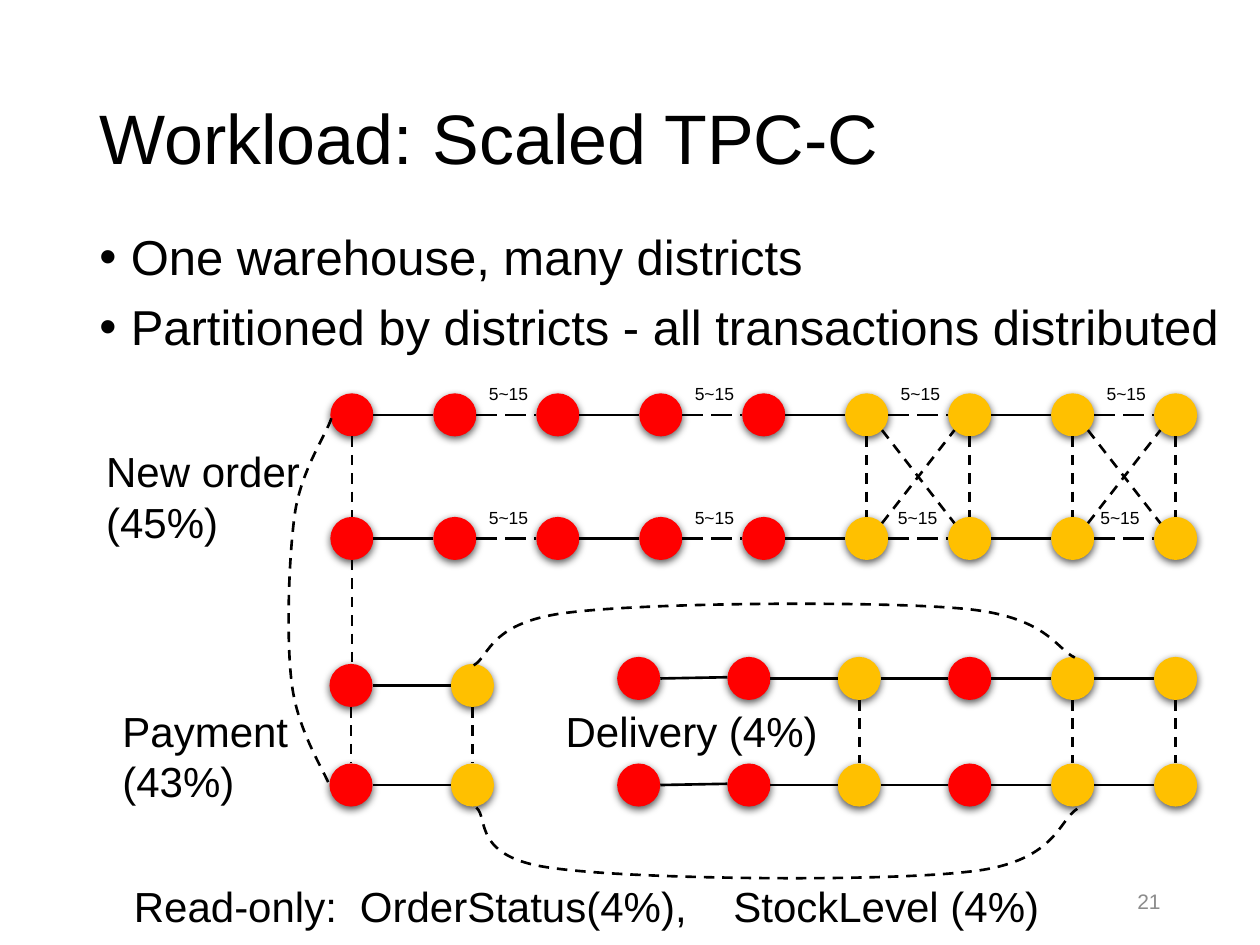
import lxml.etree
import pptx
import pptx.dml.color
import pptx.enum.dml
import pptx.enum.shapes
import pptx.enum.text
import pptx.oxml.ns
import pptx.util

Pt = pptx.util.Pt
RGB = pptx.dml.color.RGBColor.from_string
qn = pptx.oxml.ns.qn
sub = lxml.etree.SubElement
Dash = pptx.enum.dml.MSO_LINE
Align = pptx.enum.text.PP_ALIGN
Anchor = pptx.enum.text.MSO_ANCHOR
Kind = pptx.enum.shapes.MSO_SHAPE
Link = pptx.enum.shapes.MSO_CONNECTOR

theme = {
    "font": "Arial", "ink": RGB("000000"), "mute": RGB("8C8C8C"),
    "R": RGB("FF0000"), "Y": RGB("FFC000"), "line": Pt(1.5),
    "title": Pt(40), "body": Pt(28), "label": Pt(24), "page": Pt(12), "count": Pt(10),
}

deck = pptx.Presentation()
deck.slide_width, deck.slide_height = Pt(720), Pt(540)
slide = deck.slides.add_slide(deck.slide_layouts[5])
shapes = slide.shapes


def write(shape, lines, size, ink="ink", frame={}, para={}):
    box = shape.text_frame
    box.text = "\n".join(lines)
    for key, val in {"word_wrap": True, **frame}.items():
        setattr(box, key, val)
    for part in box.paragraphs:
        for key, val in {"alignment": Align.LEFT, **para}.items():
            setattr(part, key, val)
        for run in part.runs:
            for key, val in {"name": theme["font"], "size": theme[size]}.items():
                setattr(run.font, key, val)
            run.font.color.rgb = theme[ink]
    return box.paragraphs


def wire(x1, y1, x2, y2, dash=None):
    line = shapes.add_connector(Link.STRAIGHT, Pt(x1), Pt(y1), Pt(x2), Pt(y2))
    line.line.color.rgb = theme["ink"]
    for key, val in {"width": theme["line"], "dash_style": dash}.items():
        setattr(line.line, key, val)
    sub(line._element.spPr, qn("a:effectLst"))


title = shapes.title
for key, val in {"left": 49.68, "top": 28.8, "width": 620.64, "height": 104.4}.items():
    setattr(title, key, Pt(val))
write(title, ["Workload: Scaled TPC-C"], "title",
      frame={"vertical_anchor": Anchor.MIDDLE}, para={"line_spacing": 0.9})

body = shapes.add_textbox(Pt(49.68), Pt(129.6), Pt(660.24), Pt(166.3))
points = ["One warehouse, many districts",
          "Partitioned by districts - all transactions distributed"]
for part in write(body, points, "body", para={"line_spacing": 0.9, "space_before": Pt(10)}):
    prop = part._p.get_or_add_pPr()
    prop.set("marL", str(Pt(18)))
    prop.set("indent", str(Pt(-18)))
    sub(prop, qn("a:buFont"), typeface=theme["font"])
    sub(prop, qn("a:buChar"), char="•")

rad = 12.3
cols = [201.1 + 58.84 * i for i in range(9)]
pay = [200.6, 270]
ship = [365 + 63 * i for i in range(3)] + cols[6:]
top, low, mid, high, base = 237.1, 307.7, 391.7, 387.7, 448.6
rows = [
    (top, cols, "RRRRRYYYY", True, 0), (low, cols, "RRRRRYYYY", True, 0),
    (mid, pay, "RY", False, 0), (base, pay, "RY", False, 0),
    (high, ship, "RRYRYY", False, 0.7), (base, ship, "RRYRYY", False, 0.7),
]
for y, xs, tones, long, rise in rows:
    for x, tone in zip(xs, tones):
        dot = shapes.add_shape(Kind.OVAL, Pt(x - rad), Pt(y - rad), Pt(2 * rad), Pt(2 * rad))
        dot.fill.solid()
        dot.fill.fore_color.rgb = theme[tone]
        dot.line.fill.background()
        dot.shadow.inherit = False
        glow = sub(dot._element.spPr.find(qn("a:effectLst")), qn("a:outerShdw"),
                   blurRad=str(Pt(4.5)), dist=str(Pt(1.5)), dir="5400000", rotWithShape="0")
        shade = sub(glow, qn("a:srgbClr"), val=str(theme["ink"]))
        sub(shade, qn("a:alpha"), val="63000")
    for i, (x, end) in enumerate(zip(xs, xs[1:])):
        lift = 0 if i else rise
        wire(x + rad, y, end - rad, y - lift, Dash.LONG_DASH if long and i % 2 else None)

for y, shifts in [(top, (0, 0, 0, 0)), (low, (0, 0, -1.6, -3.6))]:
    for x, shift in zip(cols[1::2], shifts):
        box = shapes.add_textbox(Pt(x + rad + shift), Pt(y - 24.2), Pt(44.6), Pt(19.4))
        sides = ("margin_left", "margin_top", "margin_right", "margin_bottom")
        write(box, ["5~15"], "count", frame=dict.fromkeys(sides, Pt(7.2)))

pairs = [(x, top, low) for x in cols[:1] + cols[5:]]
pairs += [(cols[0], low, mid), (pay[0], mid, base), (pay[1], mid, base)]
pairs += [(x, high, base) for x in (ship[2], ship[4], ship[5])]
for x, y1, y2 in pairs:
    wire(x, y1 + rad, x, y2 - rad, Dash.DASH)

edge = 8.7
for x, end in [(cols[5], cols[6]), (cols[7], cols[8])]:
    for y1, y2 in [(top + edge, low - edge), (low - edge, top + edge)]:
        wire(x + edge, y1, end - edge, y2, Dash.DASH)

curves = [
    ((270.7, 344.9, 343.5, 35.3),
     [(270.7, 380.2), (280, 375), (279.4, 355), (326.2, 349.9), (373, 344.2), (502.6, 343.4),
      (550.1, 347.8), (598.3, 352.1), (603.4, 370.8), (614.2, 375.8)]),
    ((272.2, 461.5, 343.4, 40.3),
     [(272.2, 461.5), (279.4, 467.3), (269.3, 490.3), (316.1, 496.1), (362.9, 502.6), (503.3, 504),
      (553, 498.2), (603.4, 493.2), (604.8, 468.7), (615.6, 462.2)]),
    ((164.9, 239, 24.5, 210.3),
     [(189.4, 239), (186.5, 248.4), (172.1, 268.6), (168.5, 293.8), (164.9, 319.7), (163.4, 367.2),
      (167, 392.4), (170.6, 418.3), (185, 439.9), (188.6, 449.3)]),
]
for (left, high, wide, tall), knots in curves:
    spots = [(Pt(x), Pt(y)) for x, y in knots]
    form = shapes.build_freeform(*spots[0])
    form.add_line_segments(spots[3::3], close=False)
    arc = form.convert_to_shape()
    for key, val in {"left": left, "top": high, "width": wide, "height": tall}.items():
        setattr(arc, key, Pt(val))
    trail = next(arc._element.iter(qn("a:path")))
    trail.set("w", str(arc.width))
    trail.set("h", str(arc.height))
    for child in list(trail):
        trail.remove(child)
    legs = [("a:moveTo", spots[:1])]
    legs += [("a:cubicBezTo", spots[i:i + 3]) for i in range(1, len(spots), 3)]
    for tag, group in legs:
        leg = sub(trail, qn(tag))
        for x, y in group:
            sub(leg, qn("a:pt"), x=str(x - arc.left), y=str(y - arc.top))
    arc.fill.background()
    arc.shadow.inherit = False
    arc.line.color.rgb = theme["ink"]
    for key, val in {"width": theme["line"], "dash_style": Dash.DASH}.items():
        setattr(arc.line, key, val)

page = shapes.add_textbox(Pt(508.3), Pt(500.4), Pt(162), Pt(28.8))
write(page, ["21"], "page", "mute", {"vertical_anchor": Anchor.MIDDLE}, {"alignment": Align.RIGHT})

notes = [
    (53.6, 251.3, 126.7, 65.5, ["New order", "(45%)"]),
    (62.9, 399.6, 110.2, 65.5, ["Payment", "(43%)"]),
    (316.1, 399.6, 159.8, 36, ["Delivery (4%)"]),
]
for x, y, wide, tall, lines in notes:
    box = shapes.add_textbox(Pt(x), Pt(y), Pt(wide), Pt(tall))
    write(box, lines, "label", frame={"word_wrap": False})

foot = shapes.add_textbox(Pt(69.4), Pt(499.7), Pt(543.6), Pt(36))
words = ["Read-only:\tOrderStatus(4%),\tStockLevel (4%)"]
stops = sub(write(foot, words, "label")[0]._p.get_or_add_pPr(), qn("a:tabLst"))
for stop in (129.2, 342.6):
    sub(stops, qn("a:tab"), pos=str(Pt(stop)), algn="l")

deck.save("out.pptx")
